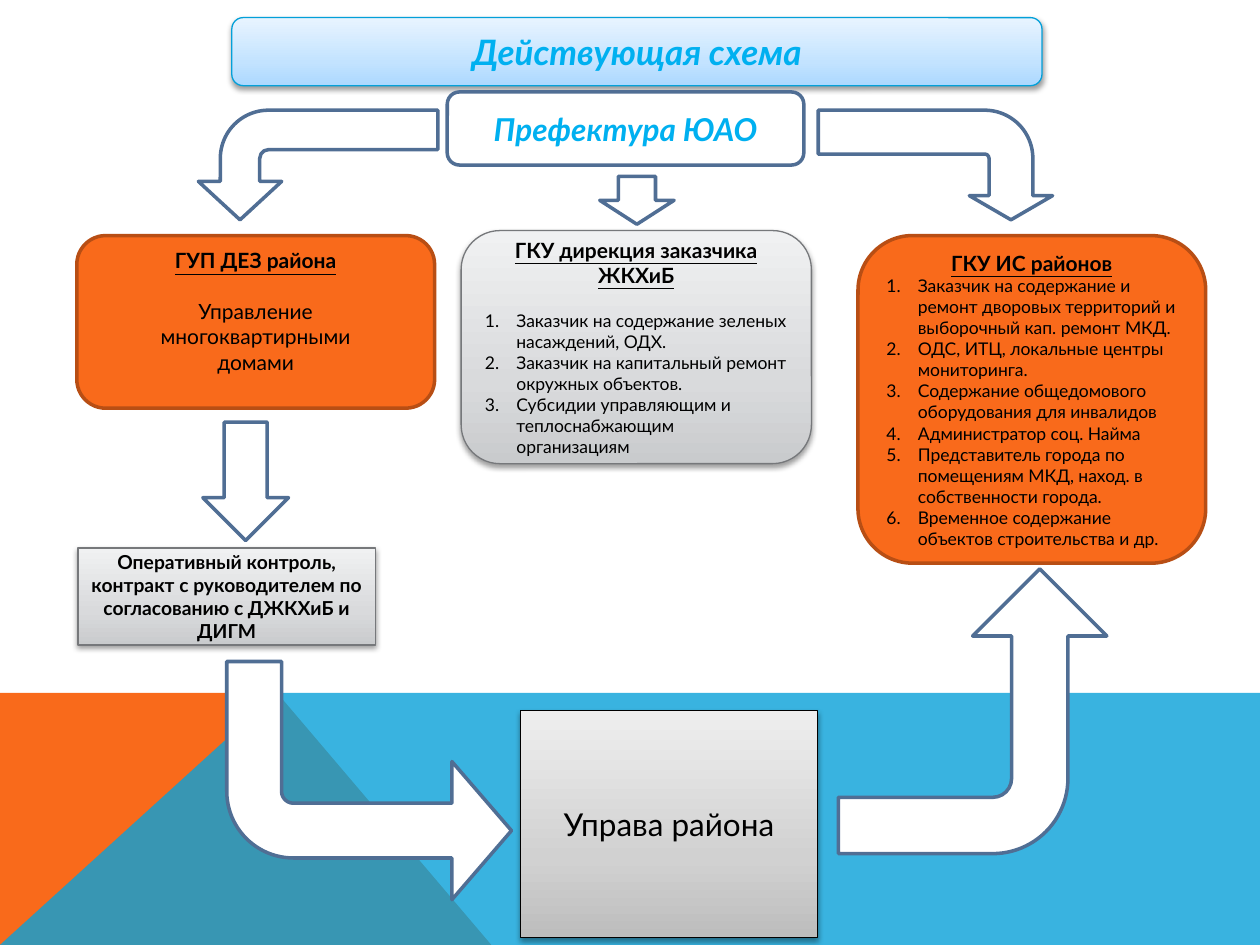
from copy import deepcopy

from lxml.etree import SubElement
from pptx import Presentation
from pptx.dml.color import RGBColor
from pptx.enum.shapes import MSO_SHAPE
from pptx.enum.text import MSO_ANCHOR, MSO_AUTO_SIZE, PP_ALIGN
from pptx.oxml.ns import qn
from pptx.util import Inches, Pt

deck = Presentation()
deck.slide_width, deck.slide_height = Inches(10), Inches(7.5)
COL, ROW = deck.slide_width / 100, deck.slide_height / 75
slide = deck.slides.add_slide(deck.slide_layouts[5])
shapes = slide.shapes
rgb = RGBColor.from_string

ORANGE, CYAN, NAVY = "F96A1B", "00B0F0", "506E94"
SILVER = ["C9CBCD", "D9DADC", "F0F1F2"]
GREY = ["BDBDBD", "D1D1D1", "EEEEEE"]
SKY = ["ABD8FF", "C3E3FF", "E8F4FF"]
ROUND, RECT = MSO_SHAPE.ROUNDED_RECTANGLE, MSO_SHAPE.RECTANGLE
BENT, DOWN = MSO_SHAPE.BENT_ARROW, MSO_SHAPE.DOWN_ARROW


def draw(kind, area, fill, edge, width):
    """Add a shape at area (columns and rows); a list fill is a shaded gradient."""
    x, y, w, h = area
    shape = shapes.add_shape(kind, int(x * COL), int(y * ROW), int(w * COL), int(h * ROW))
    shape.line.color.rgb = rgb(edge)
    shape.line.width = Pt(width)
    shape.shadow.inherit = False
    if isinstance(fill, str):
        shape.fill.solid()
        shape.fill.fore_color.rgb = rgb(fill)
        return shape
    shape.fill.gradient()
    shape.fill.gradient_angle = 90
    stops = shape._element.spPr.find(qn("a:gradFill")).find(qn("a:gsLst"))
    mid = deepcopy(stops[0])
    mid.set("pos", "35000")
    stops.insert(1, mid)
    for stop, tone in zip(shape.fill.gradient_stops, fill):
        stop.color.rgb = rgb(tone)
    glow = SubElement(shape._element.spPr.find(qn("a:effectLst")), qn("a:outerShdw"),
                      blurRad="40000", dist="20000", dir="5400000", rotWithShape="0")
    tint = SubElement(glow, qn("a:srgbClr"), val="000000")
    SubElement(tint, qn("a:alpha"), val="38000")
    return shape


def style(par, size, color="000000", bold=False, italic=False, line=False):
    par.alignment = PP_ALIGN.CENTER
    for run in par.runs:
        font = run.font
        font.name, font.size, font.color.rgb = "Lato", Pt(size), rgb(color)
        font.bold, font.italic, font.underline = bold, italic, line


# Backdrop at the foot of the slide
foot, bend = 55.2, 22.3
fields = [
    (ORANGE, 100, [(0, 75), (0, foot), (bend, foot), (39.1, 75)]),
    ("08A1D9", 80, [(0, 75), (bend, foot), (100, foot), (100, 75)]),
]
for color, alpha, points in fields:
    path = shapes.build_freeform(*points[0], scale=(COL, ROW))
    path.add_line_segments(points[1:], close=True)
    field = path.convert_to_shape()
    field.fill.solid()
    field.fill.fore_color.rgb = rgb(color)
    field.line.fill.background()
    field.shadow.inherit = False
    tint = field._element.spPr.find(qn("a:solidFill"))[0]
    SubElement(tint, qn("a:alpha"), val=str(alpha * 1000))

# Title over its banner
banner = draw(ROUND, (18.4, 1.4, 64.3, 5.4), SKY, "03A0D9", 0.75)
title = shapes.title
title.left, title.top = banner.left, banner.top
title.width, title.height = banner.width, banner.height
title.text_frame.text = "Действующая схема"
title.text_frame.auto_size = MSO_AUTO_SIZE.NONE
title.text_frame.vertical_anchor = MSO_ANCHOR.MIDDLE
style(title.text_frame.paragraphs[0], 20, CYAN, True, True)
shapes._spTree.append(title._element)

# Boxes with one text
boxes = [
    (ROUND, (35.5, 7.3, 28.3, 5.8), "FFFFFF", NAVY, 2,
     "Префектура ЮАО", (18, CYAN, True, True)),
    (RECT, (41.3, 56.4, 23.6, 18), GREY, "000000", 0.75,
     "Управа района", (18,)),
    (RECT, (6.2, 43.5, 23.6, 7.7), SILVER, "76787B", 0.75,
     "Оперативный контроль, контракт с руководителем по согласованию с ДЖКХиБ и ДИГМ",
     (11, "000000", True)),
]
for kind, area, fill, edge, width, text, look in boxes:
    frame = draw(kind, area, fill, edge, width).text_frame
    frame.text = text
    style(frame.paragraphs[0], *look)

# Boxes with a heading: gap is the space under it in points, pad the bottom inset in rows
units = [
    ((6.1, 18.7, 28.4, 13.7), ORANGE, "B84E14", 2, False, 14.6, 2.2,
     ["ГУП ДЕЗ района", "Управление", "многоквартирными", "домами"]),
    ((36.6, 18.3, 27.8, 18.5), SILVER, "76787B", 0.75, True, 12.8, 0.5,
     ["ГКУ дирекция заказчика ЖКХиБ",
      "Заказчик на содержание зеленых насаждений, ОДХ.",
      "Заказчик на капитальный ремонт окружных объектов.",
      "Субсидии управляющим и теплоснабжающим организациям"]),
    ((68.1, 18.7, 27.6, 26), ORANGE, "B84E14", 2, True, 0, 0.5,
     ["ГКУ ИС районов",
      "Заказчик на содержание и ремонт дворовых территорий и выборочный кап. ремонт МКД.",
      "ОДС, ИТЦ, локальные центры мониторинга.",
      "Содержание общедомового оборудования для инвалидов",
      "Администратор соц. Найма",
      "Представитель города по помещениям МКД, наход. в собственности города.",
      "Временное содержание объектов строительства и др."]),
]
for area, fill, edge, width, listed, gap, pad, lines in units:
    frame = draw(ROUND, area, fill, edge, width).text_frame
    frame.text = "\n".join(lines)
    frame.margin_bottom = int(pad * ROW)
    head, *items = frame.paragraphs
    style(head, 12, bold=True, line=True)
    head.space_after = Pt(gap)
    for item in items:
        style(item, 10 if listed else 12)
        if listed:
            item.alignment = PP_ALIGN.LEFT
            props = item._p.get_or_add_pPr()
            props.set("marL", str(Inches(0.25)))
            props.set("indent", str(-Inches(0.25)))
            SubElement(props, qn("a:buFont"), typeface="+mj-lt")
            SubElement(props, qn("a:buAutoNum"), type="arabicPeriod")

# Arrows: area before turning, turn, flips, proportions
arrows = [
    (BENT, (20.9, 3.6, 8.7, 19), 90, "V", (0.36, 0.38, 0.35, 0.44)),
    (BENT, (69.9, 3.8, 8.7, 18.6), 270, "HV", (0.4, 0.38, 0.22, 0.44)),
    (DOWN, (47.6, 14, 5.9, 3.8), 0, "", ()),
    (BENT, (18, 52.5, 22.6, 18.9), 180, "H", (0.23, 0.29, 0.25, 0.28)),
    (DOWN, (16.1, 33.5, 6.8, 9.4), 0, "", ()),
    (BENT, (65.9, 45.8, 22.6, 21.3), 90, "H", (0.21, 0.25, 0.25, 0.28)),
]
for kind, area, turn, flips, shares in arrows:
    arrow = draw(kind, area, "FFFFFF", NAVY, 2)
    arrow.rotation = turn
    for axis in flips:
        arrow._element.spPr.find(qn("a:xfrm")).set("flip" + axis, "1")
    for i, share in enumerate(shares):
        arrow.adjustments[i] = share

deck.save("out.pptx")
